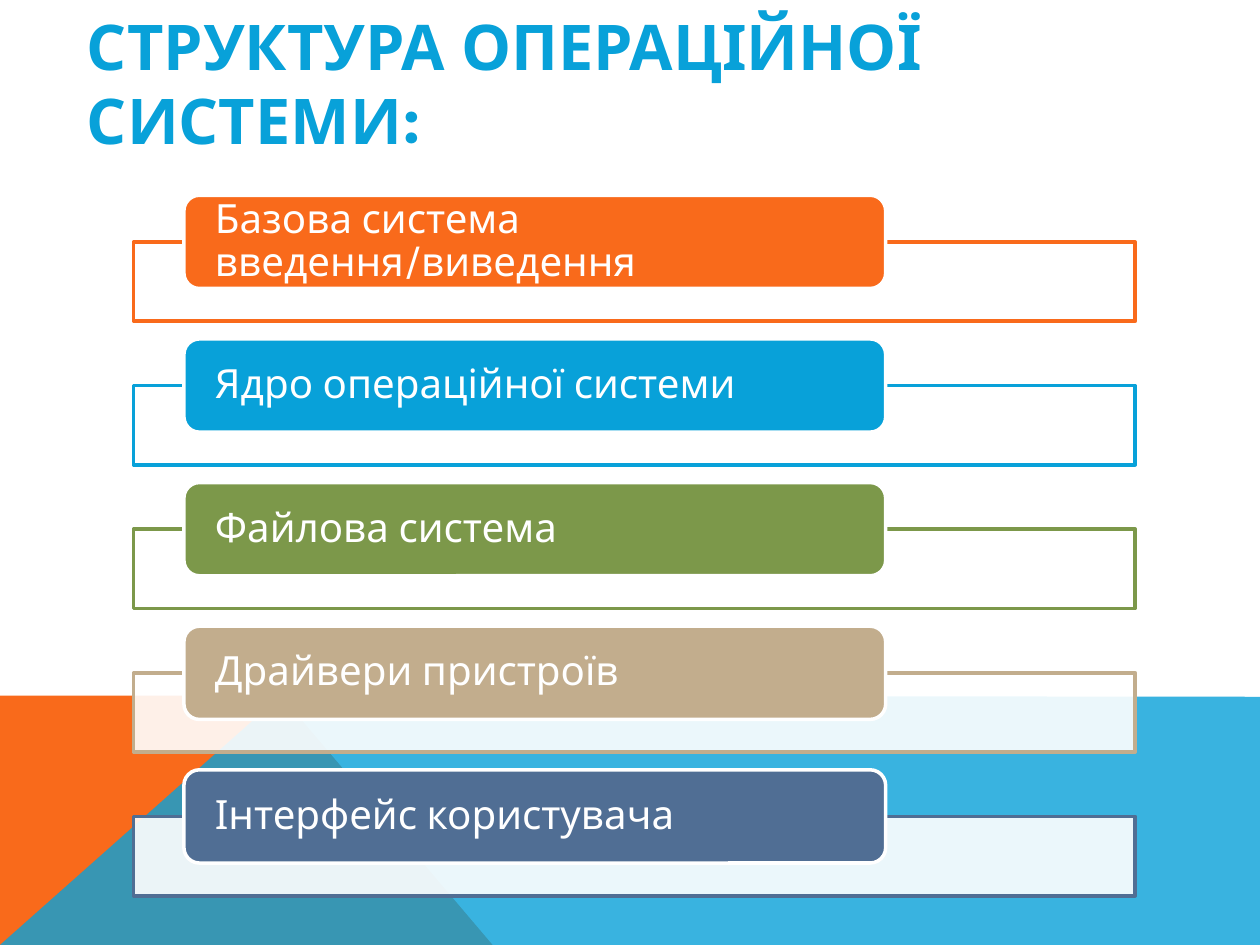
from lxml import etree
from pptx import Presentation
from pptx.dml.color import RGBColor
from pptx.enum import shapes, text
from pptx.oxml.ns import qn
from pptx.util import Inches, Pt

COLORS = {
    "orange": "F96A1B", "blue": "08A1D9", "green": "7C984A",
    "sand": "C2AD8D", "slate": "506E94", "white": "FFFFFF",
}
FONT = "Karla"


class StructureSlide:
    def __init__(self, slide):
        self.slide = slide

    def color(self, name):
        return RGBColor.from_string(COLORS[name])

    def paint(self, shape, fill, line=None, opacity=100):
        shape.shadow.inherit = False
        shape.fill.solid()
        shape.fill.fore_color.rgb = self.color(fill)
        if opacity < 100:
            tint = shape.fill._xPr.find(qn("a:solidFill"))[0]
            etree.SubElement(tint, qn("a:alpha"), val=str(opacity * 1000))
        if line:
            shape.line.color.rgb = self.color(line)
            shape.line.width = Pt(2)
        else:
            shape.line.fill.background()

    def style_run(self, run, size, color, bold=False):
        run.font.name = FONT
        run.font.size = Pt(size)
        run.font.bold = bold
        run.font.color.rgb = self.color(color)

    def polygon(self, points, fill, opacity=100):
        corners = [(Inches(x), Inches(y)) for x, y in points]
        builder = self.slide.shapes.build_freeform(*corners[0])
        builder.add_line_segments(corners[1:], close=True)
        self.paint(builder.convert_to_shape(), fill, opacity=opacity)

    def title(self, box, parts):
        heading = self.slide.shapes.title
        heading.left, heading.top, heading.width, heading.height = map(Inches, box)
        frame = heading.text_frame
        frame.word_wrap = True
        frame.auto_size = text.MSO_AUTO_SIZE.NONE
        frame.vertical_anchor = text.MSO_ANCHOR.MIDDLE
        line = frame.paragraphs[0]
        line.alignment = text.PP_ALIGN.LEFT
        line.line_spacing = 0.9
        for words, size in parts:
            run = line.add_run()
            run.text = words
            self.style_run(run, size, "blue", bold=True)

    def box(self, kind, place, fill, line, opacity=100):
        shape = self.slide.shapes.add_shape(kind, *map(Inches, place))
        self.paint(shape, fill, line, opacity)
        return shape

    def component(self, top, label, color):
        # Wide frame behind, coloured label overlapping its top edge
        self.box(shapes.MSO_SHAPE.RECTANGLE, (1.06, top + 0.37, 7.95, 0.63),
                 "white", color, opacity=90)
        tab = self.box(shapes.MSO_SHAPE.ROUNDED_RECTANGLE,
                       (1.46, top, 5.57, 0.74), color, "white")
        frame = tab.text_frame
        frame.text = label
        frame.word_wrap = True
        frame.vertical_anchor = text.MSO_ANCHOR.MIDDLE
        frame.margin_left = frame.margin_right = Inches(0.21)
        frame.margin_top = frame.margin_bottom = 0
        line = frame.paragraphs[0]
        line.alignment = text.PP_ALIGN.LEFT
        line.line_spacing = 0.9
        self.style_run(line.runs[0], 23, "white")


def main():
    deck = Presentation()
    deck.slide_width, deck.slide_height = Inches(10), Inches(7.5)
    page = StructureSlide(deck.slides.add_slide(deck.slide_layouts[5]))

    # Background bands
    page.polygon([(0, 7.5), (0, 5.52), (2.23, 5.52), (3.91, 7.5)], "orange")
    page.polygon([(0, 7.5), (2.23, 5.52), (10, 5.53), (10, 7.5)], "blue", opacity=80)

    # Heading
    page.title((0.59, 0.4, 8.74, 0.6),
               [("СТРУКТУРА ОПЕРАЦІЙНОЇ СИСТЕМИ", 36), (":", 40)])

    # Parts of the operating system
    components = [
        ("Базова система введення/виведення", "orange"),
        ("Ядро операційної системи", "blue"),
        ("Файлова система", "green"),
        ("Драйвери пристроїв", "sand"),
        ("Інтерфейс користувача", "slate"),
    ]
    for row, (label, color) in enumerate(components):
        page.component(1.55 + row * 1.14, label, color)

    deck.save("out.pptx")


if __name__ == "__main__":
    main()
